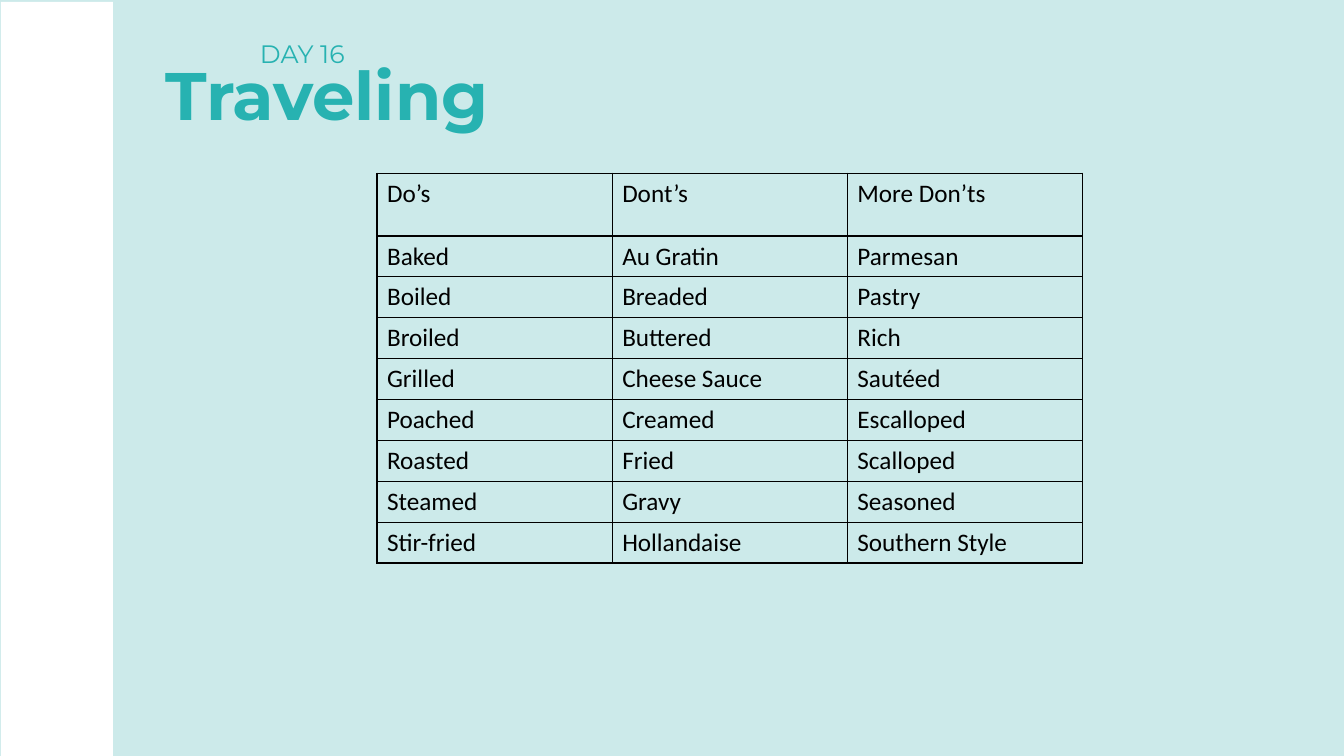
from dataclasses import dataclass

from lxml.etree import SubElement as Sub
from pptx import Presentation
from pptx.dml.color import RGBColor as RGB
from pptx.enum.shapes import MSO_SHAPE as Shape
from pptx.enum.text import MSO_ANCHOR as Anchor, MSO_AUTO_SIZE as Fit, PP_ALIGN as Align
from pptx.oxml.ns import qn
from pptx.util import Pt

# Content
DAY = "DAY 16"
TITLE = "Traveling"
FOODS = [
    ("Do’s", "Dont’s", "More Don’ts"),
    ("Baked", "Au Gratin", "Parmesan"),
    ("Boiled", "Breaded", "Pastry"),
    ("Broiled", "Buttered", "Rich"),
    ("Grilled", "Cheese Sauce", "Sautéed"),
    ("Poached", "Creamed", "Escalloped"),
    ("Roasted", "Fried", "Scalloped"),
    ("Steamed", "Gravy", "Seasoned"),
    ("Stir-fried", "Hollandaise", "Southern Style"),
]


@dataclass(frozen=True)
class Theme:
    back: str = "CCEAEA"
    teal: str = "27B2B1"
    ink: str = "000000"
    white: str = "FFFFFF"
    head: str = "Montserrat"
    body: str = "Calibri"
    big: int = 48
    small: int = 18


theme = Theme()

# Layout in points
TITLE_BOX = (110.9, 34.6, 584, 65.5)
DAY_BOX = (178.6, 23.8, 75.6, 28.8)
BAND_BOX = (0.7, 1.4, 80, 538.6)
LEFT, TOP, COL = 269.3, 123.8, 168
HEAD_ROW, ROW = 44.8, 29.2


def style(frame, font, size, color, bold=False):
    for para in frame.paragraphs:
        for run in para.runs:
            run.font.name, run.font.size, run.font.bold = font, Pt(size), bold
            run.font.color.rgb = RGB.from_string(color)


def border(cell, color, width=1):
    props = cell._tc.get_or_add_tcPr()
    for spot, side in enumerate(("lnL", "lnR", "lnT", "lnB")):
        line = Sub(props, qn(f"a:{side}"), w=str(Pt(width)))
        Sub(Sub(line, qn("a:solidFill")), qn("a:srgbClr"), val=color)
        props.insert(spot, line)


prs = Presentation()
prs.slide_width, prs.slide_height = Pt(960), Pt(540)
slide = prs.slides.add_slide(prs.slide_layouts[5])
slide.background.fill.solid()
slide.background.fill.fore_color.rgb = RGB.from_string(theme.back)

# Title
title = slide.shapes.title
title.left, title.top, title.width, title.height = map(Pt, TITLE_BOX)
frame = title.text_frame
frame.text = TITLE
frame.auto_size = Fit.NONE
frame.vertical_anchor = Anchor.TOP
frame.paragraphs[0].alignment = Align.LEFT
style(frame, theme.head, theme.big, theme.teal, True)

# Day label
frame = slide.shapes.add_textbox(*map(Pt, DAY_BOX)).text_frame
frame.text = DAY
frame.word_wrap = False
style(frame, theme.head, theme.small, theme.teal)

# Food table
count, cols = len(FOODS), len(FOODS[0])
high = HEAD_ROW + ROW * (count - 1)
table = slide.shapes.add_table(
    count, cols, Pt(LEFT), Pt(TOP), Pt(COL * cols), Pt(high)).table
table.first_row = table.horz_banding = False
for r, foods in enumerate(FOODS):
    table.rows[r].height = Pt(ROW if r else HEAD_ROW)
    for c, food in enumerate(foods):
        cell = table.cell(r, c)
        cell.text_frame.text = food
        style(cell.text_frame, theme.body, theme.small, theme.ink)
        cell.fill.background()
        border(cell, theme.ink)

# Side band
band = slide.shapes.add_shape(Shape.RECTANGLE, *map(Pt, BAND_BOX))
band.shadow.inherit = False
band.fill.solid()
band.fill.fore_color.rgb = RGB.from_string(theme.white)
band.line.fill.background()

prs.save("out.pptx")
